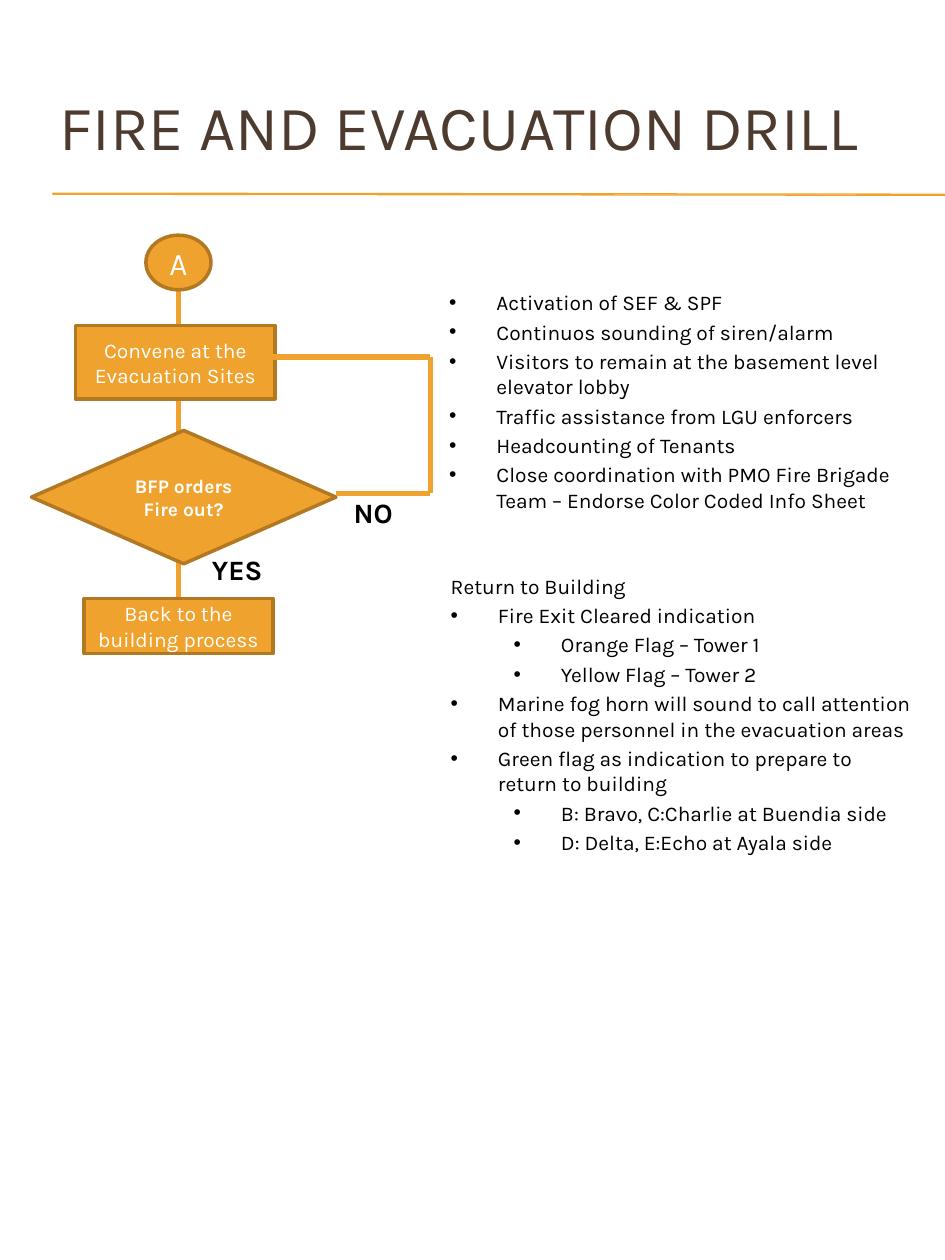
from dataclasses import dataclass

from lxml import etree
from pptx import Presentation
from pptx.dml.color import RGBColor as Rgb
from pptx.enum.shapes import MSO_CONNECTOR as Connector, MSO_SHAPE as Shape
from pptx.enum.text import MSO_ANCHOR as Anchor, PP_ALIGN as Align
from pptx.oxml.ns import qn
from pptx.util import Inches, Pt


@dataclass(frozen=True)
class Theme:
    font: str = "Karla"
    orange: Rgb = Rgb(0xF0, 0xA2, 0x2E)
    outline: Rgb = Rgb(0xB2, 0x78, 0x22)
    brown: Rgb = Rgb(0x4E, 0x3B, 0x30)
    black: Rgb = Rgb(0, 0, 0)
    white: Rgb = Rgb(0xFF, 0xFF, 0xFF)
    title: int = 36
    circle: int = 18
    label: int = 16
    body: int = 12
    decision: int = 11


theme = Theme()
deck = Presentation()
deck.slide_width, deck.slide_height = Inches(7.5), Inches(10)
slide = deck.slides.add_slide(deck.slide_layouts[6])
COLUMN = deck.slide_width / 90
ROW = deck.slide_height / 120


def write(holder, lines, size=theme.body, color=theme.black, bold=False,
          align=Align.LEFT, anchor=Anchor.TOP, wrap=True, before=0):
    """Fill a shape with (level, text) lines; level None means no bullet."""
    frame = holder.text_frame
    frame.word_wrap = wrap
    frame.vertical_anchor = anchor
    for number, (level, text) in enumerate(lines):
        paragraph = frame.add_paragraph() if number else frame.paragraphs[0]
        paragraph.alignment = align
        paragraph.space_before = Pt(before)
        run = paragraph.add_run()
        run.text = text
        run.font.name, run.font.size = theme.font, Pt(size)
        run.font.bold, run.font.color.rgb = bold, color
        if level is not None:
            paragraph.level = level
            props = paragraph._p.get_or_add_pPr()
            props.set("marL", str(Inches(0.375 + 0.5 * level)))
            props.set("indent", str(-Inches(0.375)))
            bullet_font = etree.SubElement(props, qn("a:buFont"))
            bullet_font.set("typeface", "Arial")
            etree.SubElement(props, qn("a:buChar")).set("char", "•")


def connect(x1, y1, x2, y2, width=3):
    """Draw an orange line between two grid points."""
    link = slide.shapes.add_connector(
        Connector.STRAIGHT, int(x1 * COLUMN), int(y1 * ROW),
        int(x2 * COLUMN), int(y2 * ROW))
    link.line.color.rgb, link.line.width = theme.orange, Pt(width)
    etree.SubElement(link._element.spPr, qn("a:effectLst"))
    return link


# Title with its double rule
for rule_row in (18.4, 18.5):
    connect(5, rule_row, 90, rule_row + 0.1, width=0.75)
heading = slide.shapes.add_textbox(
    int(4.5 * COLUMN), int(2.6 * ROW), int(81 * COLUMN), int(18.7 * ROW))
write(heading, [(None, "FIRE AND EVACUATION DRILL")], size=theme.title,
      color=theme.brown, anchor=Anchor.MIDDLE)

# Flowchart: the main flow lies behind the steps
main_flow = connect(17, 27.6, 17, 62.25)
steps = [
    (Shape.RECTANGLE, 7.2, 31, 19, 7, "Convene at the Evacuation Sites", theme.body, False),
    (Shape.DIAMOND, 3, 41, 29, 12.7, "BFP orders Fire out?", theme.decision, True),
    (Shape.OVAL, 13.9, 22.4, 6.2, 5.2, "A", theme.circle, False),
    (Shape.RECTANGLE, 8, 57, 18, 5.25, "Back to the building process", theme.body, False),
]
for kind, column, row, columns, rows, caption, size, bold in steps:
    step = slide.shapes.add_shape(
        kind, int(column * COLUMN), int(row * ROW),
        int(columns * COLUMN), int(rows * ROW))
    step.shadow.inherit = False
    step.fill.solid()
    step.fill.fore_color.rgb = theme.orange
    step.line.color.rgb, step.line.width = theme.outline, Pt(2)
    write(step, [(None, caption)], size=size, color=theme.white, bold=bold,
          align=Align.CENTER, anchor=Anchor.MIDDLE)
main_flow.end_connect(step, 2)

# Loop back to the evacuation sites
loop = [(32, 47), (41, 47), (41, 34), (26, 34)]
for start, end in zip(loop, loop[1:]):
    connect(*start, *end)

for answer, column, row, columns in (("NO", 32.5, 46.6, 6.5), ("YES", 19, 52, 7.8)):
    label = slide.shapes.add_textbox(
        int(column * COLUMN), int(row * ROW), int(columns * COLUMN), int(4.4 * ROW))
    write(label, [(None, answer)], size=theme.label, bold=True, wrap=False)

# Instructions beside the flow
evacuation = [
    (0, "Activation of SEF & SPF"),
    (0, "Continuos sounding of siren/alarm"),
    (0, "Visitors to remain at the basement level elevator lobby"),
    (0, "Traffic assistance from LGU enforcers"),
    (0, "Headcounting of Tenants"),
    (0, "Close coordination with PMO Fire Brigade Team – Endorse Color Coded Info Sheet"),
]
building_return = [
    (None, "Return to Building"),
    (0, "Fire Exit Cleared indication"),
    (1, "Orange Flag – Tower 1"),
    (1, "Yellow Flag – Tower 2"),
    (0, "Marine fog horn will sound to call attention of those personnel in the evacuation areas"),
    (0, "Green flag as indication to prepare to return to building"),
    (1, "B: Bravo, C:Charlie at Buendia side"),
    (1, "D: Delta, E:Echo at Ayala side"),
]
for instructions, column, row, rows in ((evacuation, 41.6, 27, 31.2),
                                        (building_return, 41.75, 54, 41)):
    panel = slide.shapes.add_textbox(
        int(column * COLUMN), int(row * ROW), int(46.3 * COLUMN), int(rows * ROW))
    write(panel, instructions, before=2.4)

deck.save("out.pptx")
